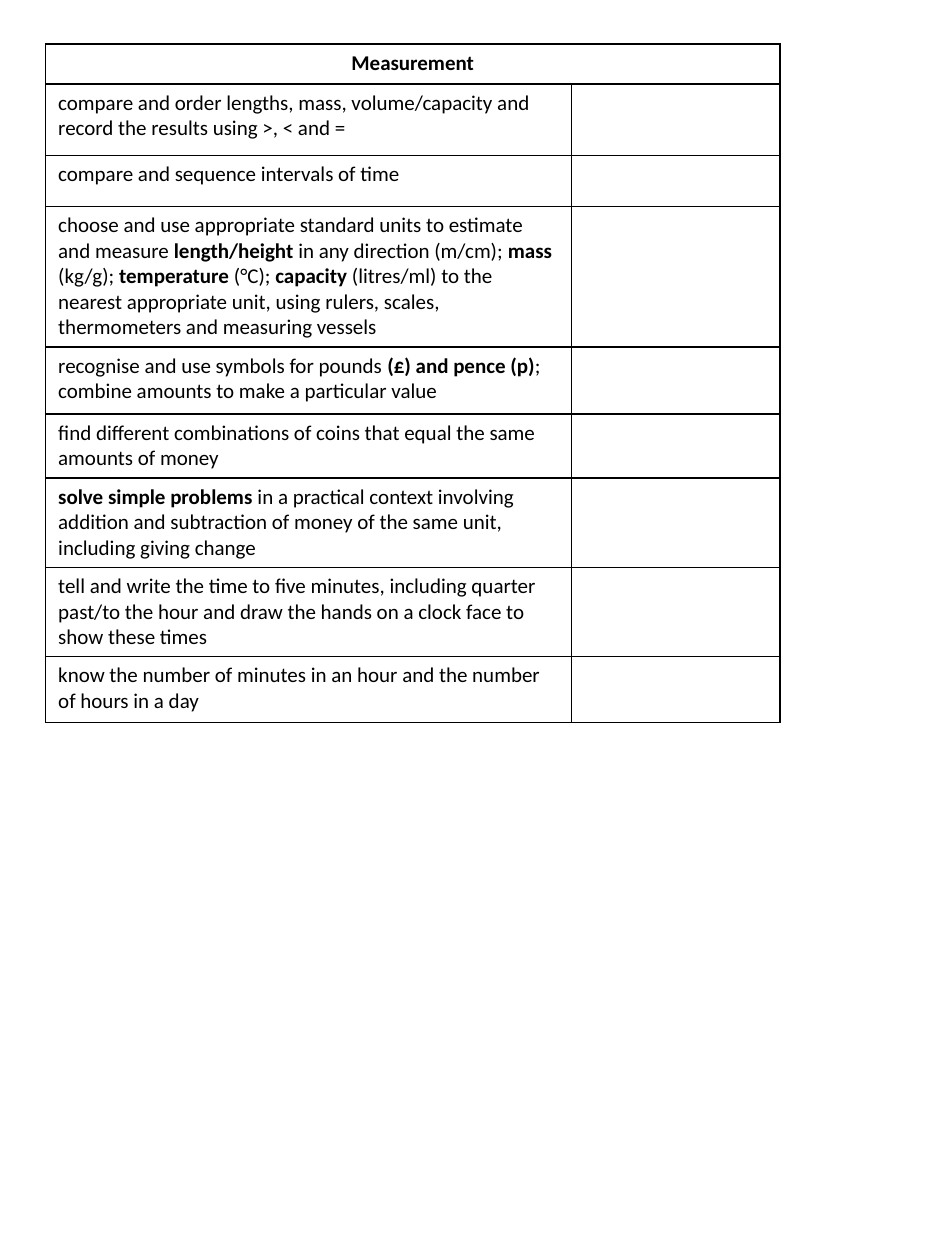
from pptx import Presentation
from pptx.dml.color import RGBColor
from pptx.enum import text
from pptx.oxml import ns
from pptx.util import Cm, Pt
from lxml import etree

# Content: (row height in cm, statement); ** switches bold on and off
TITLE = "Measurement"
TITLE_H = 0.8
STATEMENTS = [
    (1.44, "compare and order lengths, mass, volume/capacity and record the results using >, < and ="),
    (0.97, "compare and sequence intervals of time"),
    (1.9, "choose and use appropriate standard units to estimate and measure **length/height **"
          "in any direction (m/cm); **mass **(kg/g); **temperature **(°C); **capacity **"
          "(litres/ml) to the nearest appropriate unit, using rulers, scales, "
          "thermometers and measuring vessels"),
    (1.35, "recognise and use symbols for pounds **(£) and pence (p)**; "
           "combine amounts to make a particular value"),
    (1.2, "find different combinations of coins that equal the same amounts of money"),
    (1.8, "**solve simple problems **in a practical context involving addition and "
          "subtraction of money of the same unit, including giving change"),
    (1.8, "tell and write the time to five minutes, including quarter past/to the hour "
          "and draw the hands on a clock face to show these times"),
    (1.33, "know the number of minutes in an hour and the number of hours in a day"),
]
COLS = (10.6, 4.2)
LEFT, TOP = 0.92, 0.89
FONT, SIZE = "Calibri", Pt(12)
BLACK = RGBColor(0, 0, 0)


def write(cell, content):
    """Fill a cell with text, bold between ** marks."""
    p = cell.text_frame.paragraphs[0]
    for i, part in enumerate(content.split("**")):
        if part:
            r = p.add_run()
            r.text = part
            r.font.name, r.font.size = FONT, SIZE
            r.font.bold = i % 2 == 1
            r.font.color.rgb = BLACK
    return p


def style(cell):
    """Give a cell thin borders on all sides and no fill."""
    pr = cell._tc.get_or_add_tcPr()
    for side in ("a:lnL", "a:lnR", "a:lnT", "a:lnB"):
        ln = etree.SubElement(pr, ns.qn(side), w=str(Pt(1)))
        fill = etree.SubElement(ln, ns.qn("a:solidFill"))
        etree.SubElement(fill, ns.qn("a:srgbClr"), val=str(BLACK))
    cell.fill.background()


def main():
    prs = Presentation()
    prs.slide_width, prs.slide_height = Cm(19.05), Cm(25.4)
    s = prs.slides.add_slide(prs.slide_layouts[6])

    # Table grid
    heights = [TITLE_H] + [h for h, _ in STATEMENTS]
    table = s.shapes.add_table(len(heights), len(COLS), Cm(LEFT), Cm(TOP),
                               Cm(sum(COLS)), Cm(sum(heights))).table
    table.first_row = table.horz_banding = False
    for col, w in zip(table.columns, COLS):
        col.width = Cm(w)
    for row, h in zip(table.rows, heights):
        row.height = Cm(h)
    for cell in table.iter_cells():
        style(cell)

    # Heading across both columns
    head = table.cell(0, 0)
    head.merge(table.cell(0, 1))
    write(head, f"**{TITLE}**").alignment = text.PP_ALIGN.CENTER

    # Statements, with an empty column beside them
    for i, (_, statement) in enumerate(STATEMENTS, start=1):
        write(table.cell(i, 0), statement)

    prs.save("out.pptx")


if __name__ == "__main__":
    main()
